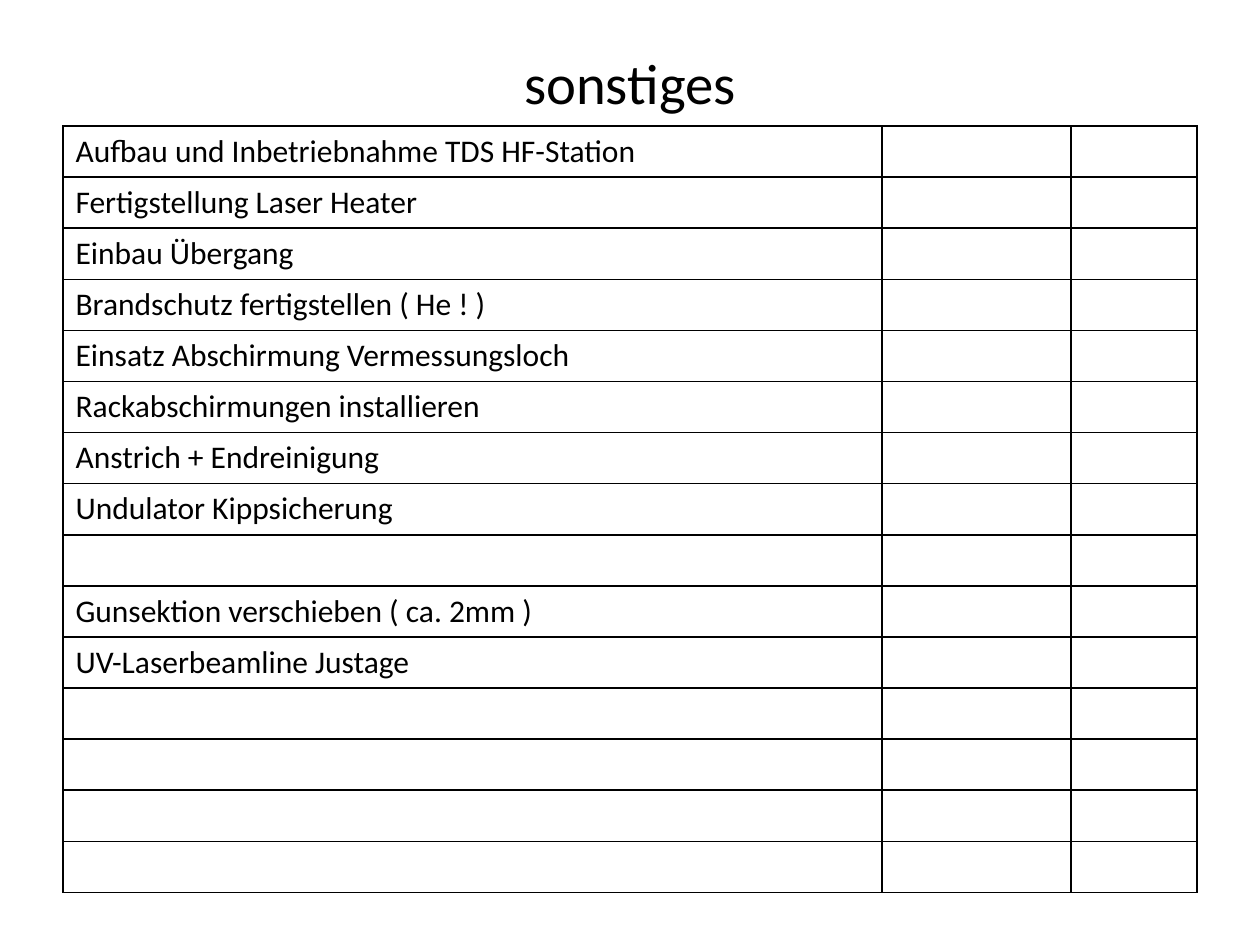
from lxml import etree
from pptx import Presentation
from pptx.dml.color import RGBColor
from pptx.enum import text
from pptx.oxml import ns
from pptx.util import Pt

COLORS = {"ink": "000000", "border": "000000"}
FONT = "Calibri"
TASKS = [
    "Aufbau und Inbetriebnahme TDS HF-Station",
    "Fertigstellung Laser Heater",
    "Einbau Übergang",
    "Brandschutz fertigstellen ( He ! )",
    "Einsatz Abschirmung Vermessungsloch",
    "Rackabschirmungen installieren",
    "Anstrich + Endreinigung",
    "Undulator Kippsicherung",
    "",
    "Gunsektion verschieben ( ca. 2mm )",
    "UV-Laserbeamline Justage",
    "", "", "", "",
]
COLUMN_SHARES = [6.5, 1.5, 1]


def add_run(p, content, size):
    """Add a run in the slide's font and ink colour."""
    r = p.add_run()
    r.text = content
    r.font.name = FONT
    r.font.size = Pt(size)
    r.font.color.rgb = RGBColor.from_string(COLORS["ink"])


def add_title(s, content, x, y, w, h):
    """Place the centred title in its box."""
    tf = s.shapes.add_textbox(Pt(x), Pt(y), Pt(w), Pt(h)).text_frame
    tf.word_wrap = True
    tf.vertical_anchor = text.MSO_ANCHOR.MIDDLE
    p = tf.paragraphs[0]
    p.alignment = text.PP_ALIGN.CENTER
    add_run(p, content, 32.4)


def style_cell(cell):
    """Give a cell thin borders on every side and no fill."""
    tcPr = cell._tc.get_or_add_tcPr()
    for side in ("lnL", "lnR", "lnT", "lnB"):
        ln = etree.SubElement(tcPr, ns.qn(f"a:{side}"), w=str(Pt(1)))
        fill = etree.SubElement(ln, ns.qn("a:solidFill"))
        etree.SubElement(fill, ns.qn("a:srgbClr"), val=COLORS["border"])
    cell.fill.background()


def add_task_table(s, tasks, x, y, w, h):
    """Place the task list as a table with two empty columns to fill in."""
    frame = s.shapes.add_table(len(tasks), len(COLUMN_SHARES), Pt(x), Pt(y), Pt(w), Pt(h))
    table = frame.table
    table.first_row = False
    table.horz_banding = False
    for column, share in zip(table.columns, COLUMN_SHARES):
        column.width = Pt(w * share / sum(COLUMN_SHARES))
    for row, task in zip(table.rows, tasks):
        row.height = Pt(h / len(tasks))
        for cell in row.cells:
            style_cell(cell)
        if task:
            add_run(row.cells[0].text_frame.paragraphs[0], task, 18)


def main():
    """Build the slide and save it."""
    prs = Presentation()
    prs.slide_width, prs.slide_height = Pt(720), Pt(540)
    s = prs.slides.add_slide(prs.slide_layouts[6])
    add_title(s, "sonstiges", 36, 21.6, 648, 50.4)
    add_task_table(s, TASKS, 36, 72, 648, 438)
    prs.save("out.pptx")


if __name__ == "__main__":
    main()
